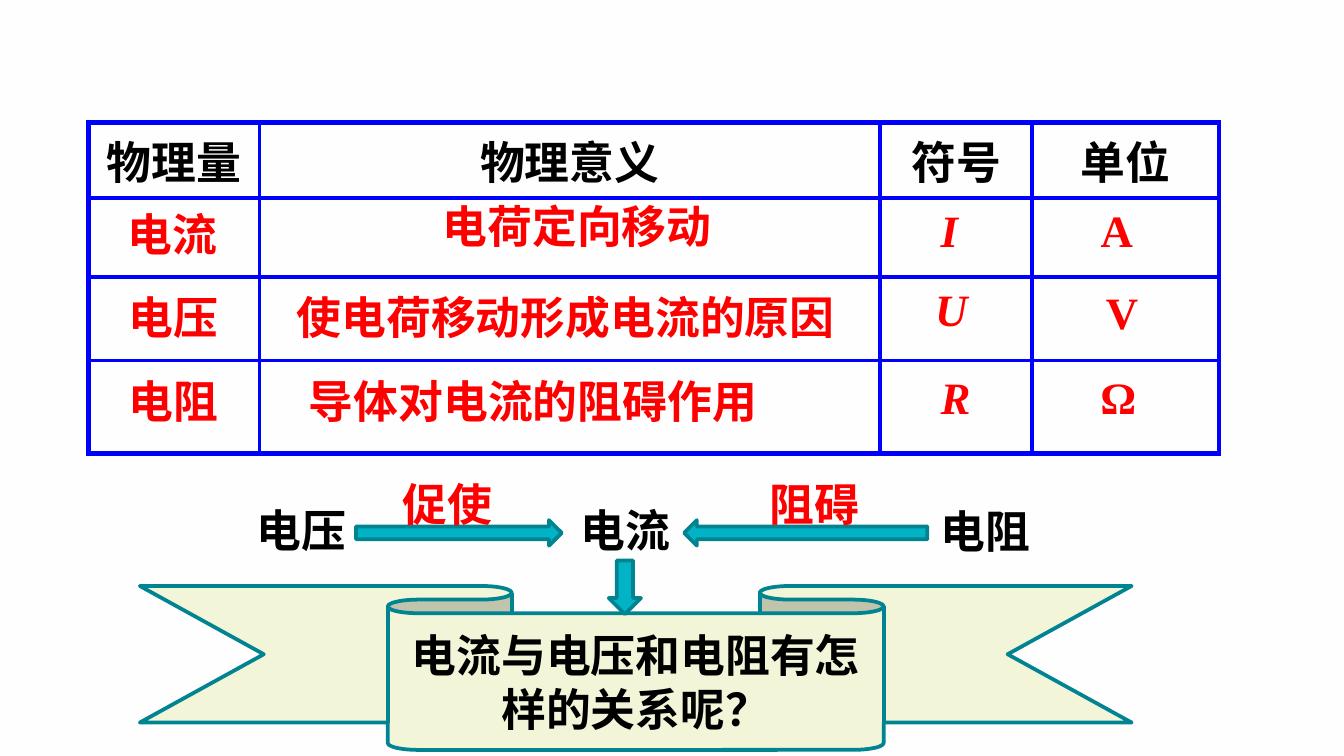
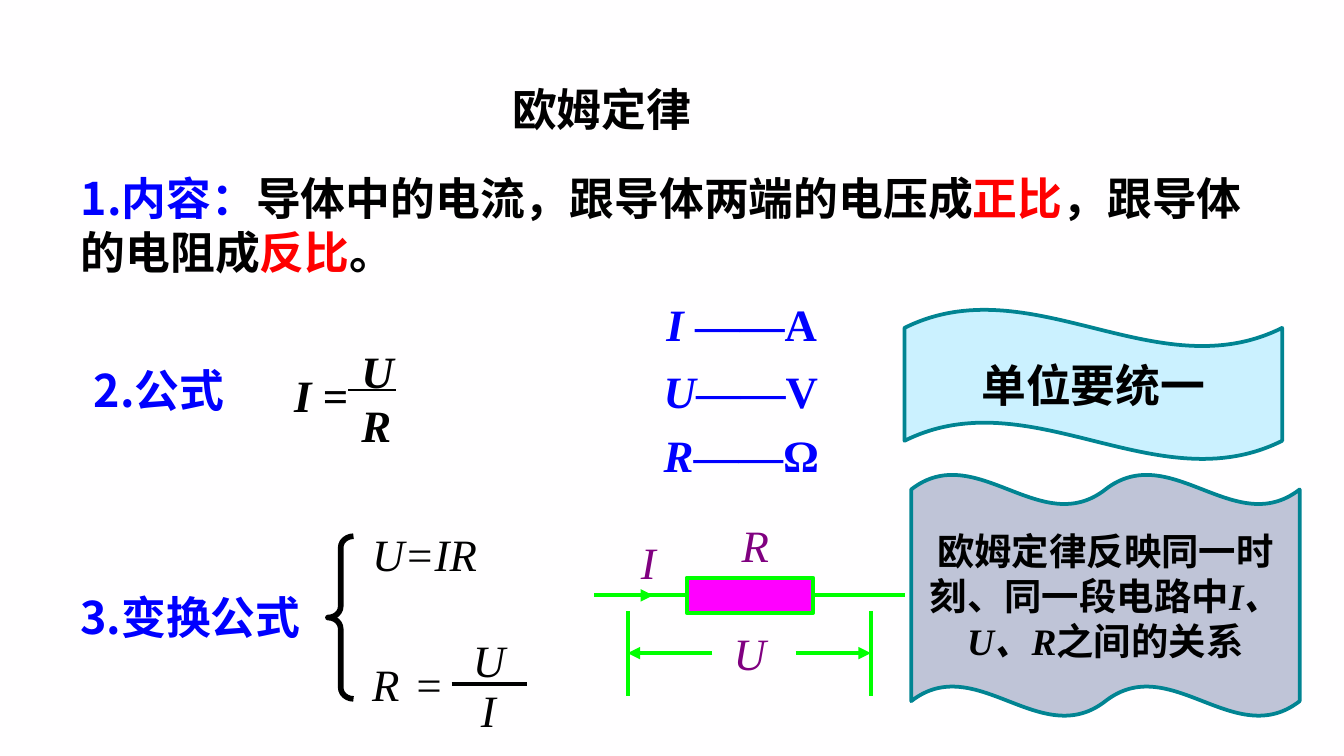
import itertools
from dataclasses import dataclass

import pptx
import pptx.dml.color
import pptx.enum.shapes
import pptx.enum.text
import pptx.oxml.ns
import pptx.presentation
import pptx.shapes.base
import pptx.slide
import pptx.table
import pptx.text.text
import pptx.util
from lxml import etree

RGBColor = pptx.dml.color.RGBColor
Shape = pptx.enum.shapes.MSO_SHAPE
Align = pptx.enum.text.PP_ALIGN
Anchor = pptx.enum.text.MSO_ANCHOR
AutoSize = pptx.enum.text.MSO_AUTO_SIZE
qn = pptx.oxml.ns.qn

EMU_PER_PX = 9144
PAGE_WIDTH = 1000
PAPER = RGBColor(0xFF, 0xFE, 0xFF)
BLACK = RGBColor(0x00, 0x00, 0x00)
RED = RGBColor(0xFF, 0x00, 0x00)
BLUE = RGBColor(0x00, 0x00, 0xFF)
GREEN = RGBColor(0x00, 0xFF, 0x00)
MAGENTA = RGBColor(0xFF, 0x00, 0xFF)
PURPLE = RGBColor(0x80, 0x00, 0x80)
TURQUOISE = RGBColor(0x02, 0xB3, 0xC5)
TEAL = RGBColor(0x01, 0x84, 0x92)
CREAM = RGBColor(0xF2, 0xF5, 0xD7)
SKY = RGBColor(0xCB, 0xF1, 0xFF)
SLATE = RGBColor(0xBF, 0xC4, 0xD7)
SERIF = "Times New Roman"
SANS = "Noto Sans CJK SC"


@dataclass(frozen=True)
class Span:
    text: str
    color: RGBColor = BLACK
    italic: bool = False
    bold: bool = True
    font: str = SERIF


@dataclass(frozen=True)
class Label:
    x: int
    y: int
    width: int
    spans: tuple[Span, ...]
    height: int = 50
    wrap: bool = True
    align: Align = Align.LEFT


@dataclass(frozen=True)
class Figure:
    kind: Shape
    x: int
    y: int
    width: int
    height: int
    fill: RGBColor | None = None
    outline: RGBColor | None = TEAL
    weight: float = 2
    spans: tuple[Span, ...] = ()
    size: int = 24
    align: Align = Align.CENTER
    wrap: bool = True
    adjustments: tuple[float, ...] = ()


@dataclass(frozen=True)
class Stroke:
    start: tuple[int, int]
    end: tuple[int, int]
    color: RGBColor = GREEN
    weight: float = 2.25
    arrow: bool = False
    resistor_side: int | None = None


def px(length: int) -> pptx.util.Emu:
    return pptx.util.Emu(length * EMU_PER_PX)


def write(frame: pptx.text.text.TextFrame, spans: tuple[Span, ...],
          align: Align, size: int = 24) -> None:
    frame.text = spans[0].text
    for span in spans[1:]:
        frame.paragraphs[0].add_run().text = span.text
    for para in frame.paragraphs:
        para.alignment = align
        para.space_before = pptx.util.Pt(0)
    runs = [run for para in frame.paragraphs for run in para.runs]
    for run, span in itertools.zip_longest(runs, spans, fillvalue=spans[-1]):
        font = run.font
        font.name = span.font
        font.size = pptx.util.Pt(size)
        font.bold = span.bold
        font.italic = span.italic
        font.color.rgb = span.color
        east_asian = etree.Element(qn("a:ea"), typeface=SANS)
        font._element.find(qn("a:latin")).addnext(east_asian)


def place(box: pptx.shapes.base.BaseShape, label: Label) -> None:
    box.left, box.top = px(label.x), px(label.y)
    box.width, box.height = px(label.width), px(label.height)
    frame = box.text_frame
    frame.word_wrap = label.wrap
    frame.auto_size = AutoSize.SHAPE_TO_FIT_TEXT
    frame.vertical_anchor = Anchor.TOP
    write(frame, label.spans, label.align)


def draw_label(page: pptx.slide.Slide, label: Label) -> None:
    place(page.shapes.add_textbox(0, 0, 0, 0), label)


def draw_figure(page: pptx.slide.Slide, figure: Figure) -> pptx.shapes.base.BaseShape:
    shape = page.shapes.add_shape(figure.kind, px(figure.x), px(figure.y),
                                  px(figure.width), px(figure.height))
    shape.shadow.inherit = False
    for index, value in enumerate(figure.adjustments):
        shape.adjustments[index] = value
    if figure.fill is None:
        shape.fill.background()
    else:
        shape.fill.solid()
        shape.fill.fore_color.rgb = figure.fill
    if figure.outline is None:
        shape.line.fill.background()
    else:
        shape.line.color.rgb = figure.outline
        shape.line.width = pptx.util.Pt(figure.weight)
    if figure.spans:
        shape.text_frame.word_wrap = figure.wrap
        shape.text_frame.vertical_anchor = Anchor.MIDDLE
        write(shape.text_frame, figure.spans, figure.align, figure.size)
    return shape


def draw_stroke(page: pptx.slide.Slide, stroke: Stroke,
                resistor: pptx.shapes.base.BaseShape) -> None:
    line = page.shapes.add_connector(pptx.enum.shapes.MSO_CONNECTOR.STRAIGHT,
                                     *map(px, stroke.start + stroke.end))
    if stroke.resistor_side is not None:
        line.begin_connect(resistor, stroke.resistor_side)
    line.line.color.rgb = stroke.color
    line.line.width = pptx.util.Pt(stroke.weight)
    properties = line._element.spPr
    if stroke.arrow:
        etree.SubElement(properties.find(qn("a:ln")), qn("a:tailEnd"), type="triangle")
    etree.SubElement(properties, qn("a:effectLst"))


def set_borders(cell: pptx.table._Cell, weights: dict[str, float]) -> None:
    properties = cell._tc.get_or_add_tcPr()
    for index, (side, weight) in enumerate(weights.items()):
        border = etree.Element(qn(f"a:ln{side}"), w=str(pptx.util.Pt(weight)))
        fill = etree.SubElement(border, qn("a:solidFill"))
        etree.SubElement(fill, qn("a:srgbClr"), val=str(BLUE))
        properties.insert(index, border)


def draw_quantity_table(page: pptx.slide.Slide) -> None:
    headings = ("物理量", "物理意义", "符号", "单位")
    widths, heights = (127, 462, 113, 139), (48, 59, 62, 69)
    table = page.shapes.add_table(len(heights), len(widths), px(66), px(91),
                                  px(sum(widths)), px(sum(heights))).table
    table.first_row = table.horz_banding = False
    for column, width in zip(table.columns, widths):
        column.width = px(width)
    for row_index, height in enumerate(heights):
        table.rows[row_index].height = px(height)
        for column_index, heading in enumerate(headings):
            cell = table.cell(row_index, column_index)
            cell.margin_left = cell.margin_right = px(4)
            cell.margin_top = cell.margin_bottom = px(4)
            cell.vertical_anchor = Anchor.MIDDLE
            cell.fill.background()
            set_borders(cell, {
                "L": 3 if column_index == 0 else 2.25,
                "R": 2.25,
                "T": 3 if row_index == 0 else 2.25,
                "B": 3 if row_index == len(heights) - 1 else 2.25,
            })
            if row_index == 0:
                write(cell.text_frame, (Span(heading),), Align.CENTER)


def red(text: str, italic: bool = False) -> tuple[Span, ...]:
    return (Span(text, RED, italic),)


def thin(text: str, color: RGBColor = BLACK) -> tuple[Span, ...]:
    return (Span(text, color, italic=True, bold=False),)


def sans(text: str, color: RGBColor = BLACK) -> tuple[Span, ...]:
    return (Span(text, color, font=SANS),)


QUANTITY_LABELS = (
    Label(85, 149, 102, red("电流")),
    Label(256, 143, 347, red("电荷定向移动"), align=Align.CENTER),
    Label(690, 146, 33, red("I", True)),
    Label(809, 146, 49, red("A")),
    Label(86, 211, 102, red("电压")),
    Label(211, 211, 439, red("使电荷移动形成电流的原因")),
    Label(686, 205, 49, red("U", True)),
    Label(813, 207, 69, red("V")),
    Label(86, 273, 117, red("电阻")),
    Label(220, 273, 382, red("导体对电流的阻碍作用")),
    Label(690, 270, 44, red("R", True)),
    Label(809, 270, 50, red("Ω")),
    Label(422, 369, 102, (Span("电流"),)),
    Label(181, 369, 102, (Span("电压"),)),
    Label(690, 370, 117, (Span("电阻"),)),
)
INFLUENCE_ARROWS = (
    Figure(Shape.RIGHT_ARROW, 265, 387, 153, 19, TURQUOISE),
    Figure(Shape.LEFT_ARROW, 509, 387, 181, 19, TURQUOISE),
)
INFLUENCE_LABELS = (
    Label(290, 350, 102, red("促使")),
    Label(563, 350, 87, red("阻碍")),
)
QUESTION_FIGURES = (
    Figure(Shape.DOWN_RIBBON, 104, 436, 738, 122, CREAM,
           spans=sans("电流与电压和电阻有怎样的关系呢？")),
    Figure(Shape.DOWN_ARROW, 453, 417, 24, 40, TURQUOISE),
)

LAW_TITLE = Label(371, 56, 171, (Span("欧姆定律"),))
LAW_CONTENT = Label(50, 122, 910, (
    Span("1.内容：", BLUE, font=SANS),
    Span("导体中的电流，跟导体两端的电压成"),
    Span("正比", RED),
    Span("，跟导体的电阻成"),
    Span("反比", RED),
    Span("。"),
), height=91)
LAW_LABELS = (
    Label(60, 265, 172, sans("2.公式", BLUE)),
    Label(50, 434, 190, sans("3.变换公式", BLUE)),
    Label(267, 387, 125, thin("U=IR")),
    Label(267, 484, 40, thin("R"), wrap=False),
    Label(298, 484, 42, thin("="), wrap=False),
    Label(348, 503, 31, thin("I"), wrap=False),
    Label(342, 466, 46, thin("U")),
    Label(542, 380, 56, thin("R", PURPLE)),
    Label(536, 461, 75, thin("U", PURPLE)),
    Label(467, 393, 69, thin("I", PURPLE)),
    Label(209, 269, 89, (Span("I ", italic=True), Span("="))),
    Label(259, 251, 44, (Span("U\nR", italic=True),), height=91, wrap=False),
)
UNIT_ROWS = (
    (486, 216, 132, "I ", "——A"),
    (484, 266, 135, "U", "——V"),
    (484, 313, 136, "R", "——Ω"),
)
RESISTOR = Figure(Shape.RECTANGLE, 511, 430, 94, 26, MAGENTA, GREEN, 2.25)
LAW_FIGURES = (
    Figure(Shape.LEFT_BRACE, 244, 399, 19, 121, outline=BLACK, weight=3,
           adjustments=(0.44, 0.5)),
    *(Figure(Shape.RECTANGLE, x, y, width, 50, PAPER, None, align=Align.LEFT, wrap=False,
             spans=(Span(symbol, BLUE, italic=True), Span(unit, BLUE)))
      for x, y, width, symbol, unit in UNIT_ROWS),
    Figure(Shape.WAVE, 673, 230, 281, 112, SKY, spans=sans("单位要统一")),
    Figure(Shape.DOUBLE_WAVE, 678, 353, 289, 180, SLATE, size=20, spans=(
        Span("欧姆定律反映同一时刻、同一段电路中"),
        Span("I、U、R", italic=True),
        Span("之间的关系"),
    )),
)
LAW_STROKES = (
    Stroke((336, 509), (392, 509), BLACK),
    Stroke((259, 290), (295, 290), BLACK, 1),
    Stroke((605, 443), (673, 443), resistor_side=3),
    Stroke((511, 443), (442, 443), resistor_side=1),
    Stroke((442, 443), (486, 443), arrow=True),
    Stroke((467, 455), (467, 518)),
    Stroke((648, 455), (648, 518)),
    Stroke((530, 486), (467, 486), arrow=True),
    Stroke((592, 486), (648, 486), arrow=True),
)


def add_page(deck: pptx.presentation.Presentation, layout: int) -> pptx.slide.Slide:
    page = deck.slides.add_slide(deck.slide_layouts[layout])
    page.background.fill.solid()
    page.background.fill.fore_color.rgb = PAPER
    return page


def build_quantities(page: pptx.slide.Slide) -> None:
    draw_quantity_table(page)
    for label in QUANTITY_LABELS:
        draw_label(page, label)
    for arrow in INFLUENCE_ARROWS:
        draw_figure(page, arrow)
    for label in INFLUENCE_LABELS:
        draw_label(page, label)
    for figure in QUESTION_FIGURES:
        draw_figure(page, figure)


def build_law(page: pptx.slide.Slide) -> None:
    place(page.shapes.title, LAW_TITLE)
    body = page.placeholders[1]
    place(body, LAW_CONTENT)
    properties = body.text_frame.paragraphs[0]._p.get_or_add_pPr()
    properties.set("marL", "0")
    properties.set("indent", "0")
    etree.SubElement(properties, qn("a:buNone"))
    resistor = draw_figure(page, RESISTOR)
    for stroke in LAW_STROKES:
        draw_stroke(page, stroke, resistor)
    for label in LAW_LABELS:
        draw_label(page, label)
    for figure in LAW_FIGURES:
        draw_figure(page, figure)


def main() -> None:
    deck = pptx.Presentation()
    deck.slide_width = px(PAGE_WIDTH)
    deck.slide_height = pptx.util.Emu(px(PAGE_WIDTH) * 9 // 16)
    build_quantities(add_page(deck, 6))
    build_law(add_page(deck, 1))
    deck.save("out.pptx")


if __name__ == "__main__":
    main()
